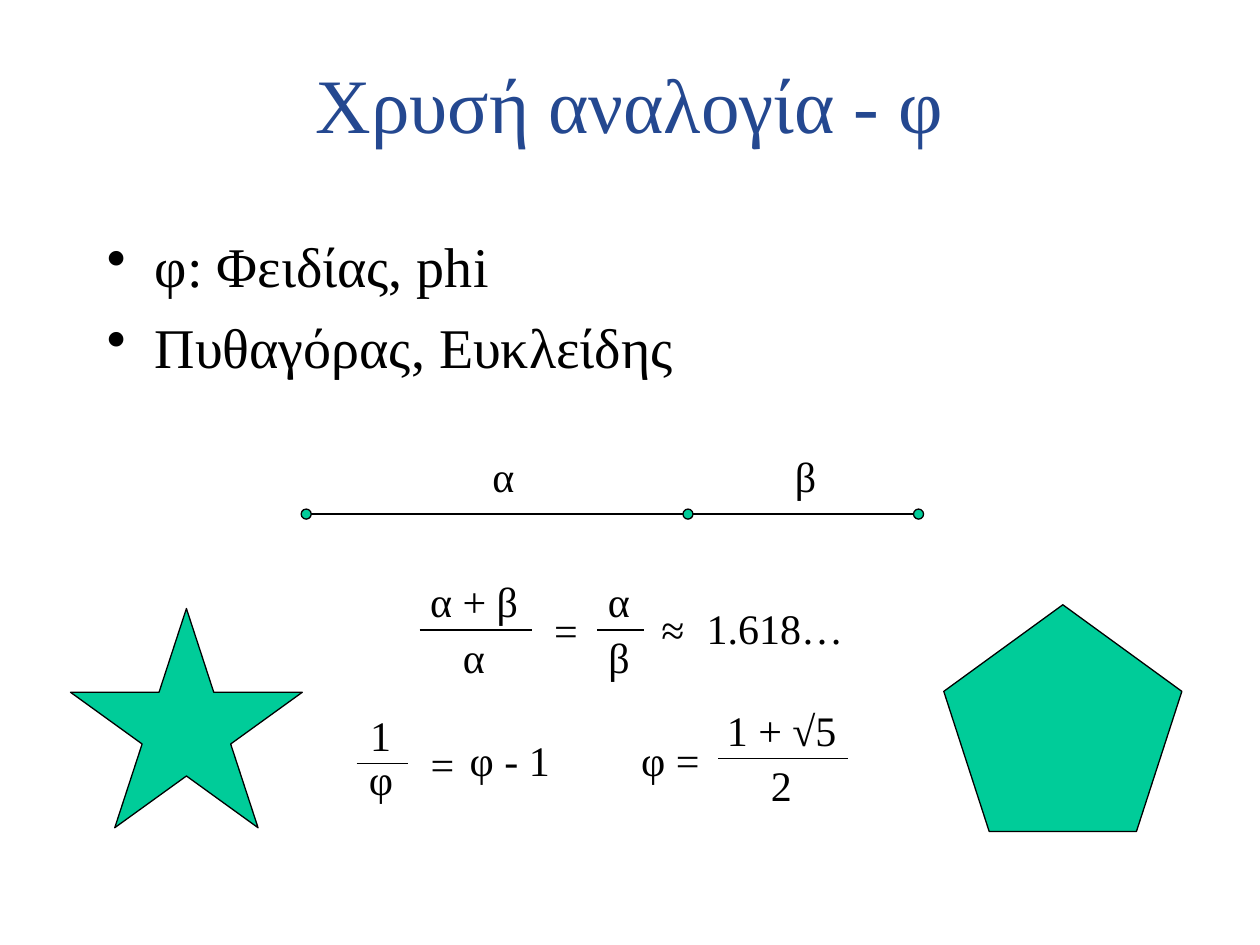
from lxml.etree import SubElement
from pptx import Presentation
from pptx.dml.color import RGBColor
from pptx.enum.shapes import MSO_CONNECTOR, MSO_SHAPE
from pptx.enum.text import MSO_ANCHOR, MSO_AUTO_SIZE, PP_ALIGN
from pptx.oxml.ns import qn
from pptx.util import Inches, Pt

BLUE = RGBColor(0x24, 0x48, 0x90)
GREEN = RGBColor(0x00, 0xCC, 0x99)
BLACK = RGBColor(0, 0, 0)
WHITE = RGBColor(255, 255, 255)
FONT = "Times New Roman"


def write(parent, text, box, size=24, color=BLACK, align=PP_ALIGN.LEFT,
          anchor=MSO_ANCHOR.TOP, wrap=False, bullet=False):
    frame = parent.add_textbox(*map(Inches, box)).text_frame
    frame.word_wrap = wrap
    frame.auto_size = MSO_AUTO_SIZE.NONE if wrap else MSO_AUTO_SIZE.SHAPE_TO_FIT_TEXT
    frame.vertical_anchor = anchor
    for i, line in enumerate(text.split("\n")):
        para = frame.paragraphs[0] if i == 0 else frame.add_paragraph()
        para.alignment = align
        run = para.add_run()
        run.text = line
        run.font.name = FONT
        run.font.size = Pt(size)
        run.font.color.rgb = color
        if bullet:
            para.space_before = Pt(size / 4)
            props = para._p.get_or_add_pPr()
            props.set("marL", str(Inches(0.38)))
            props.set("indent", str(-Inches(0.38)))
            SubElement(props, qn("a:buChar")).set("char", "•")


def rule(parent, x, y, w, width=1):
    line = parent.add_connector(MSO_CONNECTOR.STRAIGHT, Inches(x), Inches(y),
                                Inches(x + w), Inches(y))
    line.line.color.rgb = BLACK
    line.line.width = Pt(width)
    SubElement(line._element.spPr, qn("a:effectLst"))


def solid(parent, kind, box):
    shape = parent.add_shape(kind, *map(Inches, box))
    shape.shadow.inherit = False
    shape.fill.solid()
    shape.fill.fore_color.rgb = GREEN
    shape.line.color.rgb = BLACK
    shape.line.width = Pt(0.75)


def segment(shapes, box):
    x, y, w, h = box
    group = shapes.add_group_shape().shapes
    base = y + h - 0.04
    rule(group, x + 0.02, base, w - 0.07, 1.5)
    for left in (x, x + 3.03, x + w - 0.08):
        solid(group, MSO_SHAPE.OVAL, (left, base - 0.04, 0.08, 0.08))
    write(group, "α", (x + 1.42, y, 0.38, 0.5))
    write(group, "β", (x + 3.82, y, 0.37, 0.5))


def ratio(shapes, box, top, low, drop=-0.04):
    x, y, w = box
    rule(shapes, x, y, w)
    mid = x + w / 2 - 0.01
    for (text, wide), shift in ((top, -0.48), (low, drop)):
        write(shapes, text, (mid - wide / 2, y + shift, wide, 0.5))


def ratios(shapes, box):
    x, y = box
    ratio(shapes, (x, y, 0.89), ("α + β", 0.9), ("α", 0.38))
    ratio(shapes, (x + 1.41, y, 0.37), ("α", 0.38), ("β", 0.37))
    for text, dx, dy, w in (("=", 0.97, -0.25, 0.39), ("≈", 1.82, -0.26, 0.38),
                            ("1.618…", 2.18, -0.27, 1.28)):
        write(shapes, text, (x + dx, y + dy, w, 0.5))


def values(shapes, box):
    x, y = box
    ratio(shapes, (x, y, 0.41), ("1", 0.37), ("φ", 0.39), drop=-0.13)
    ratio(shapes, (x + 2.87, y - 0.04, 1.03), ("1 + √5", 1.07), ("2", 0.37))
    for text, dx, dy, w in (("=", 0.49, -0.25, 0.39), ("φ - 1", 0.8, -0.28, 0.84),
                            ("φ =", 2.16, -0.28, 0.75)):
        write(shapes, text, (x + dx, y + dy, w, 0.5))


def main():
    deck = Presentation()
    deck.slide_width, deck.slide_height = Inches(10), Inches(7.5)
    slide = deck.slides.add_slide(deck.slide_layouts[6])
    slide.background.fill.solid()
    slide.background.fill.fore_color.rgb = WHITE
    shapes = slide.shapes
    write(shapes, "Χρυσή αναλογία - φ", (0.75, 0.19, 8.5, 1.25), size=44, color=BLUE,
          align=PP_ALIGN.CENTER, anchor=MSO_ANCHOR.MIDDLE, wrap=True)
    write(shapes, "φ: Φειδίας, phi\nΠυθαγόρας, Ευκλείδης", (0.75, 1.79, 8.23, 4.5),
          size=32, wrap=True, bullet=True)
    segment(shapes, (2.39, 3.53, 4.94, 0.59))
    ratios(shapes, (3.33, 5))
    values(shapes, (2.83, 6.06))
    solid(shapes, MSO_SHAPE.REGULAR_PENTAGON, (7.49, 4.8, 1.89, 1.8))
    solid(shapes, MSO_SHAPE.STAR_5_POINT, (0.56, 4.83, 1.84, 1.74))
    deck.save("out.pptx")


if __name__ == "__main__":
    main()
